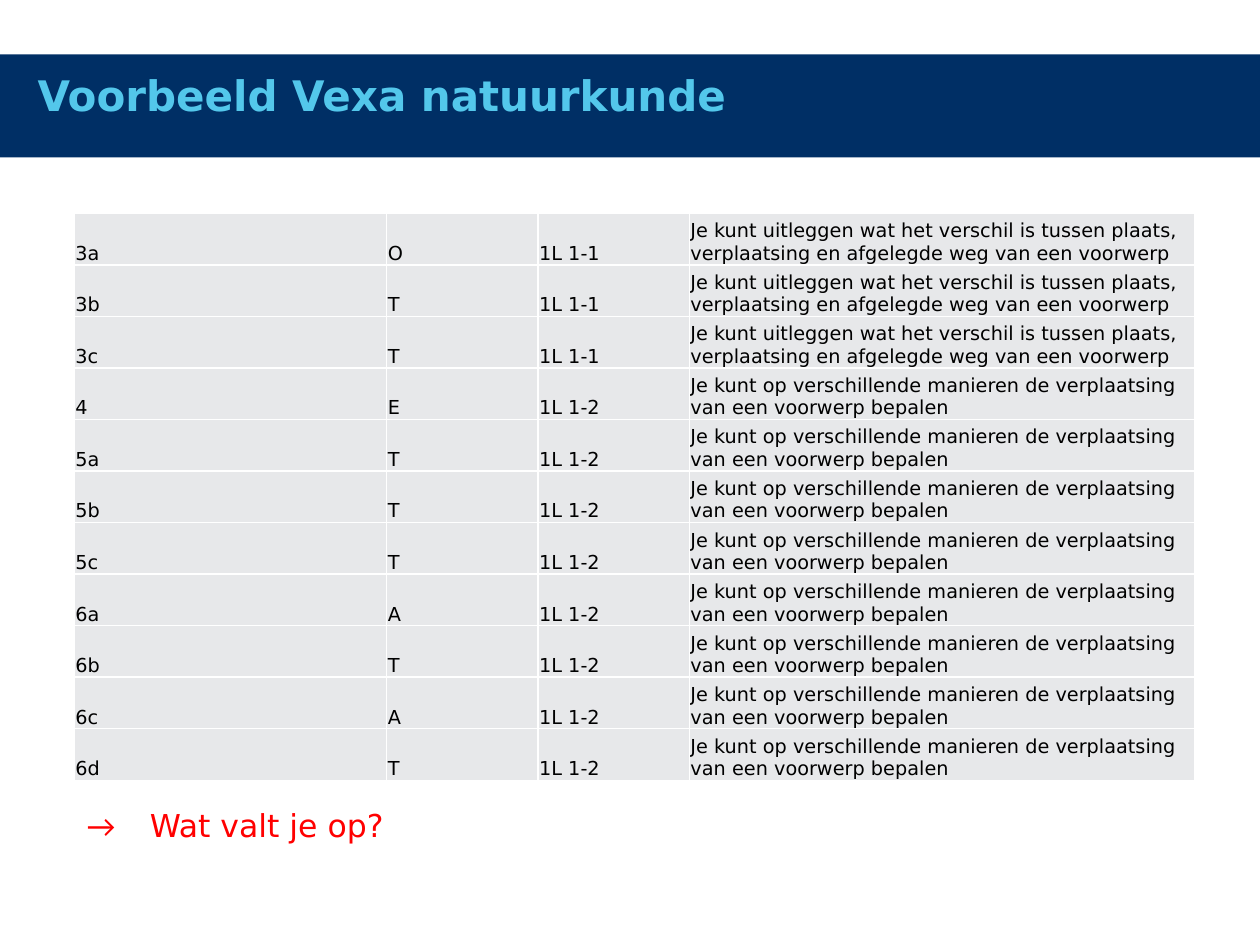
from lxml import etree
from pptx import Presentation
from pptx.dml.color import RGBColor
from pptx.enum.shapes import MSO_SHAPE
from pptx.enum.text import MSO_ANCHOR
from pptx.oxml.ns import qn
from pptx.util import Pt

RECTANGLE = MSO_SHAPE.RECTANGLE
TOP = MSO_ANCHOR.TOP
BOTTOM = MSO_ANCHOR.BOTTOM

COLORS = {
    "band": "002F65",
    "title": "53C7EB",
    "cell": "E7E8EA",
    "border": "FFFFFF",
    "text": "000000",
    "question": "FF0000",
}
FONT = "DejaVu Sans"
ARROW_FONT = "Calibri"

DISPLACEMENT = (
    "1L 1-1",
    "Je kunt uitleggen wat het verschil is tussen plaats, "
    "verplaatsing en afgelegde weg van een voorwerp",
)
METHODS = (
    "1L 1-2",
    "Je kunt op verschillende manieren de verplaatsing van een voorwerp bepalen",
)
EXERCISES = [
    ("3a", "O", *DISPLACEMENT),
    ("3b", "T", *DISPLACEMENT),
    ("3c", "T", *DISPLACEMENT),
    ("4", "E", *METHODS),
    ("5a", "T", *METHODS),
    ("5b", "T", *METHODS),
    ("5c", "T", *METHODS),
    ("6a", "A", *METHODS),
    ("6b", "T", *METHODS),
    ("6c", "A", *METHODS),
    ("6d", "T", *METHODS),
]
COLUMN_WIDTHS = (178.5, 86.5, 86.5, 288.7)


def color(name):
    return RGBColor.from_string(COLORS[name])


def format_run(run, size, color_name, font=FONT, bold=False):
    run.font.name = font
    run.font.size = Pt(size)
    run.font.bold = bold
    run.font.color.rgb = color(color_name)


def add_text_box(slide, left, top, width, height):
    text_box = slide.shapes.add_textbox(Pt(left), Pt(top), Pt(width), Pt(height))
    text_frame = text_box.text_frame
    text_frame.word_wrap = True
    text_frame.vertical_anchor = TOP
    return text_frame


def add_header(slide, left, top, width, height):
    band = slide.shapes.add_shape(RECTANGLE, Pt(left), Pt(top), Pt(width), Pt(height))
    band.shadow.inherit = False
    band.fill.solid()
    band.fill.fore_color.rgb = color("band")
    band.line.fill.background()
    text_frame = add_text_box(slide, left + 14.4, top + 5, 557.3, 51)
    text_frame.text = "Voorbeeld Vexa natuurkunde"
    format_run(text_frame.paragraphs[0].runs[0], 24, "title", bold=True)


def set_borders(cell):
    properties = cell._tc.get_or_add_tcPr()
    for side in ("a:lnL", "a:lnR", "a:lnT", "a:lnB"):
        line = etree.SubElement(properties, qn(side), w=str(Pt(1)))
        fill = etree.SubElement(line, qn("a:solidFill"))
        etree.SubElement(fill, qn("a:srgbClr"), val=COLORS["border"])


def fill_cell(cell, text):
    set_borders(cell)
    cell.fill.solid()
    cell.fill.fore_color.rgb = color("cell")
    cell.vertical_anchor = BOTTOM
    cell.margin_left = cell.margin_right = cell.margin_top = Pt(0.6)
    cell.margin_bottom = Pt(0)
    cell.text_frame.text = text
    format_run(cell.text_frame.paragraphs[0].runs[0], 11, "text")


def add_exercise_table(slide, left, top, width, height):
    table = slide.shapes.add_table(
        len(EXERCISES), len(COLUMN_WIDTHS), Pt(left), Pt(top), Pt(width), Pt(height)
    ).table
    table.first_row = False
    table.horz_banding = False
    for column, column_width in zip(table.columns, COLUMN_WIDTHS):
        column.width = Pt(column_width)
    for row, exercise in zip(table.rows, EXERCISES):
        row.height = Pt(height / len(EXERCISES))
        for cell, text in zip(row.cells, exercise):
            fill_cell(cell, text)


def add_question(slide, left, top, width, height):
    text_frame = add_text_box(slide, left, top, width, height)
    paragraph = text_frame.paragraphs[0]
    for text, font in (("→\t", ARROW_FONT), ("Wat valt je op?", FONT)):
        run = paragraph.add_run()
        run.text = text
        format_run(run, 18, "question", font)


def main():
    presentation = Presentation()
    presentation.slide_width = Pt(720)
    presentation.slide_height = Pt(540)
    slide = presentation.slides.add_slide(presentation.slide_layouts[6])
    add_header(slide, 0, 31, 720, 59)
    add_exercise_table(slide, 42.5, 121.9, sum(COLUMN_WIDTHS), 324)
    add_question(slide, 42.5, 457.2, 351.4, 29)
    presentation.save("out.pptx")


if __name__ == "__main__":
    main()
